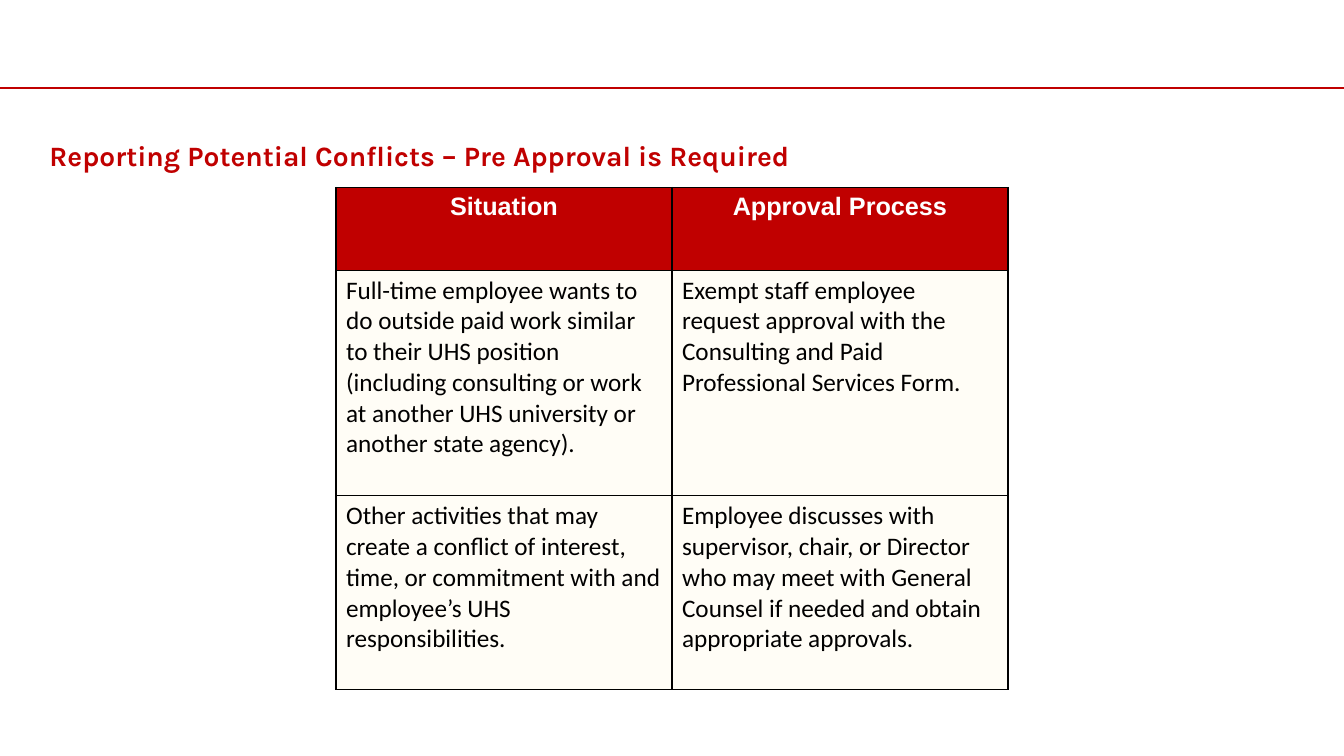
from dataclasses import dataclass

from lxml import etree
from pptx import Presentation
from pptx.dml.color import RGBColor
from pptx.enum.shapes import MSO_CONNECTOR
from pptx.enum.text import MSO_ANCHOR, PP_ALIGN
from pptx.oxml.ns import qn
from pptx.util import Inches, Pt

STRAIGHT = MSO_CONNECTOR.STRAIGHT
TOP = MSO_ANCHOR.TOP
LEFT, CENTER = PP_ALIGN.LEFT, PP_ALIGN.CENTER

SLIDE_WIDTH, SLIDE_HEIGHT = Inches(13.33), Inches(7.5)
RED, BLACK, WHITE, CREAM = "C00000", "000000", "FFFFFF", "FFF9D9"
TABLE_WIDTH = SLIDE_WIDTH // 2
ROW_HEIGHTS = (0.82, 2.24, 1.92)


@dataclass(frozen=True)
class CellStyle:
    fill: str
    opacity: int
    font: str
    color: str
    bold: bool
    align: PP_ALIGN


HEADER = CellStyle(RED, 100, "Arial", WHITE, True, CENTER)
BODY = CellStyle(CREAM, 22, "Calibri", BLACK, False, LEFT)

APPROVALS = (
    ("Situation", "Approval Process"),
    ("Full-time employee wants to do outside paid work similar to their UHS "
     "position (including consulting or work at another UHS university or "
     "another state agency).",
     "Exempt staff employee request approval with the Consulting and Paid "
     "Professional Services Form."),
    ("Other activities that may create a conflict of interest, time, or "
     "commitment with and employee’s UHS responsibilities.",
     "Employee discusses with supervisor, chair, or Director who may meet with "
     "General Counsel if needed and obtain appropriate approvals."),
)


def rgb(value: str) -> RGBColor:
    return RGBColor.from_string(value)


def format_font(font, name: str, size: float, color: str, bold: bool) -> None:
    font.name, font.size, font.bold = name, Pt(size), bold
    font.color.rgb = rgb(color)


def add_rule(slide) -> None:
    y = Inches(0.87)
    rule = slide.shapes.add_connector(STRAIGHT, 0, y, SLIDE_WIDTH, y)
    rule.line.color.rgb = rgb(RED)
    rule.line.width = Pt(1.5)
    etree.SubElement(rule._element.spPr, qn("a:effectLst"))


def fill_title(slide, text: str) -> None:
    title = slide.shapes.title
    title.left, title.top = Inches(0.39), Inches(1.29)
    title.width, title.height = Inches(12.56), Inches(0.57)
    frame = title.text_frame
    frame.text = text
    frame.word_wrap = True
    frame.vertical_anchor = TOP
    frame.margin_top = Inches(0.08)
    paragraph = frame.paragraphs[0]
    paragraph.alignment = LEFT
    paragraph.line_spacing = 1.0
    format_font(paragraph.runs[0].font, "Karla", 20, RED, True)


def add_borders(cell) -> None:
    """Put a thin black line on each side, ahead of the cell's fill."""
    properties = cell._tc.get_or_add_tcPr()
    for index, side in enumerate(("a:lnL", "a:lnR", "a:lnT", "a:lnB")):
        border = etree.Element(qn(side), w=str(Pt(1)))
        solid = etree.SubElement(border, qn("a:solidFill"))
        etree.SubElement(solid, qn("a:srgbClr"), val=BLACK)
        properties.insert(index, border)


def fill_cell(cell, text: str, style: CellStyle) -> None:
    cell.fill.solid()
    cell.fill.fore_color.rgb = rgb(style.fill)
    if style.opacity < 100:
        fill_color = cell._tc.tcPr.find(".//" + qn("a:srgbClr"))
        etree.SubElement(fill_color, qn("a:alpha"), val=str(style.opacity * 1000))
    add_borders(cell)
    cell.text_frame.text = text
    paragraph = cell.text_frame.paragraphs[0]
    paragraph.alignment = style.align
    format_font(paragraph.runs[0].font, style.font, 18, style.color, style.bold)


def add_approval_table(slide) -> None:
    left = (SLIDE_WIDTH - TABLE_WIDTH) // 2
    table = slide.shapes.add_table(
        len(APPROVALS), len(APPROVALS[0]), left, Inches(1.86),
        TABLE_WIDTH, Inches(sum(ROW_HEIGHTS))).table
    table.horz_banding = False
    for r, (texts, height) in enumerate(zip(APPROVALS, ROW_HEIGHTS)):
        table.rows[r].height = Inches(height)
        for c, text in enumerate(texts):
            fill_cell(table.cell(r, c), text, BODY if r else HEADER)


def main() -> None:
    deck = Presentation()
    deck.slide_width, deck.slide_height = SLIDE_WIDTH, SLIDE_HEIGHT
    slide = deck.slides.add_slide(deck.slide_layouts.get_by_name("Title Only"))
    add_rule(slide)
    fill_title(slide, "Reporting Potential Conflicts – Pre Approval is Required")
    add_approval_table(slide)
    deck.save("out.pptx")


if __name__ == "__main__":
    main()
